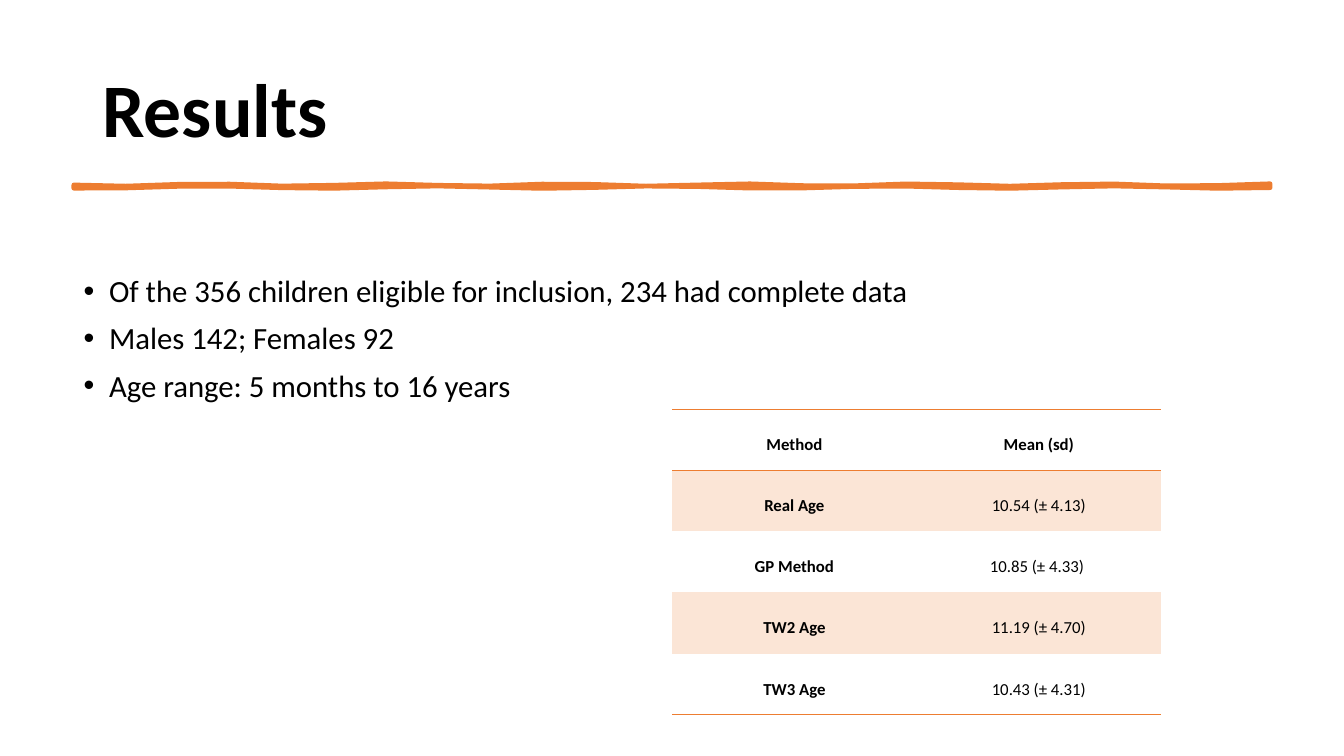
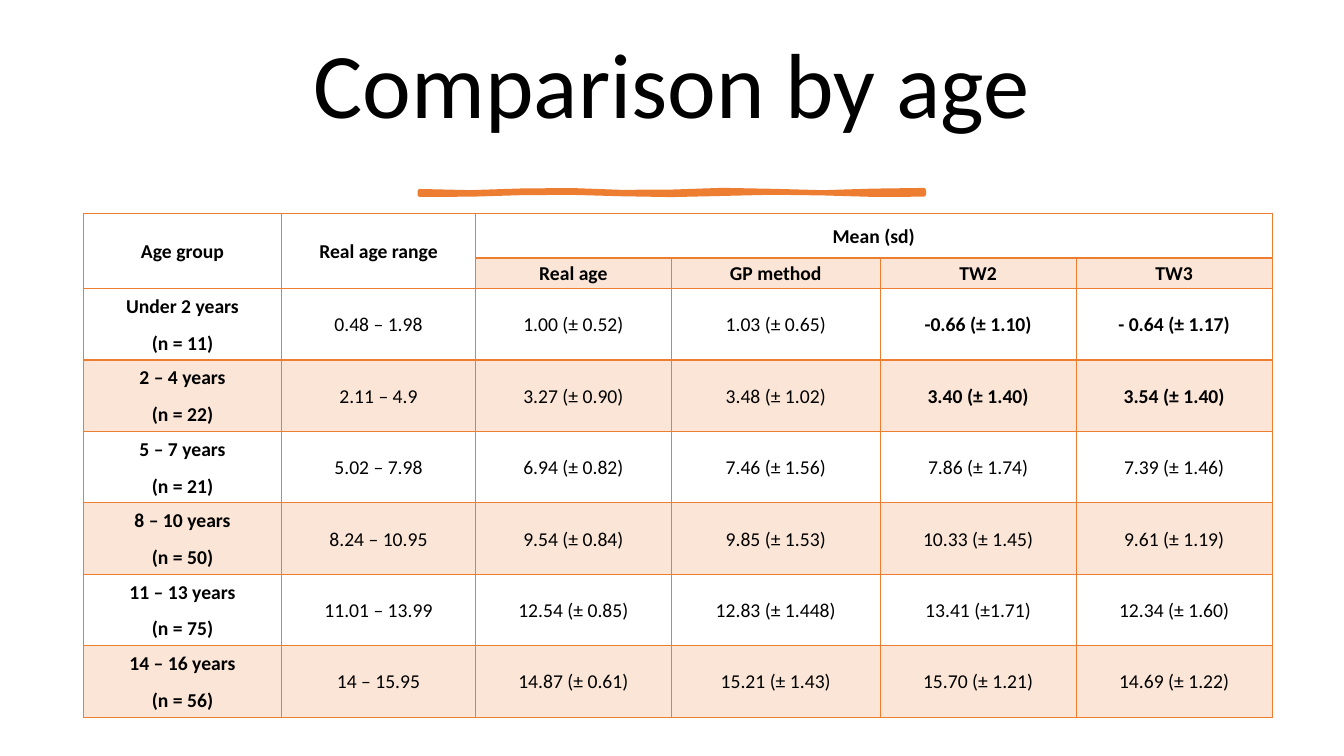
from math import sin

from lxml.etree import SubElement
from pptx import Presentation
from pptx.dml.color import RGBColor
from pptx.enum.text import MSO_ANCHOR, MSO_AUTO_SIZE, PP_ALIGN
from pptx.oxml.ns import qn
from pptx.util import Cm, Pt

FONT = "Calibri"
COLORS = {"text": "000000", "accent": "ED7D31", "band": "FBE5D6"}
PLAIN_TABLE_STYLE = "{2D5ABB26-0587-4C30-8999-92F81FD0307C}"
SIDES = {"left": "a:lnL", "right": "a:lnR", "top": "a:lnT", "bottom": "a:lnB"}

BULLETS = [
    "Of the 356 children eligible for inclusion, 234 had complete data",
    "Males 142; Females 92",
    "Age range: 5 months to 16 years",
]
METHOD_ROWS = [
    ["Method", "Mean (sd)"],
    ["Real Age", "10.54 (± 4.13)"],
    ["GP Method", "10.85 (± 4.33) "],
    ["TW2 Age", "11.19 (± 4.70)"],
    ["TW3 Age", "10.43 (± 4.31)"],
]
AGE_ROWS = [
    ["Age group", "Real age range", "Mean (sd)", "", "", ""],
    ["", "", "Real age", "GP method", "TW2", "TW3"],
    ["Under 2 years\n(n = 11)", "0.48 – 1.98", "1.00 (± 0.52)",
     "1.03 (± 0.65)", "-0.66 (± 1.10)", "- 0.64 (± 1.17)"],
    ["2 – 4 years\n(n = 22)", "2.11 – 4.9", "3.27 (± 0.90)",
     "3.48 (± 1.02)", "3.40 (± 1.40)", "3.54 (± 1.40)"],
    ["5 – 7 years\n(n = 21)", "5.02 – 7.98", "6.94 (± 0.82)",
     "7.46 (± 1.56)", "7.86 (± 1.74)", "7.39 (± 1.46)"],
    ["8 – 10 years\n(n = 50)", "8.24 – 10.95", "9.54 (± 0.84)",
     "9.85 (± 1.53)", "10.33 (± 1.45)", "9.61 (± 1.19)"],
    ["11 – 13 years\n(n = 75)", "11.01 – 13.99", "12.54 (± 0.85)",
     "12.83 (± 1.448)", "13.41 (±1.71)", "12.34 (± 1.60)"],
    ["14 – 16 years\n(n = 56)", "14 – 15.95", "14.87 (± 0.61)",
     "15.21 (± 1.43)", "15.70 (± 1.21)", "14.69 (± 1.22)"],
]


def color(name):
    return RGBColor.from_string(COLORS[name])


def format_paragraph(paragraph, size, bold=False, align=PP_ALIGN.LEFT, spacing=0.9):
    paragraph.font.name = FONT
    paragraph.font.size = Pt(size)
    paragraph.font.bold = bold
    paragraph.font.color.rgb = color("text")
    paragraph.alignment = align
    paragraph.line_spacing = spacing


def add_titled_slide(presentation, text, box, size, bold=False, align=PP_ALIGN.LEFT):
    slide = presentation.slides.add_slide(presentation.slide_layouts[5])
    title = slide.shapes.title
    title.left, title.top, title.width, title.height = map(Cm, box)
    frame = title.text_frame
    frame.text = text
    frame.auto_size = MSO_AUTO_SIZE.NONE
    frame.vertical_anchor = MSO_ANCHOR.MIDDLE
    format_paragraph(frame.paragraphs[0], size, bold, align)
    return slide


def add_brush_stroke(slide, left, middle, width):
    steps = round(width / 1.3)
    positions = [width * step / steps for step in range(steps + 1)]
    top = [(left + x, middle - 0.03 + 0.03 * sin(1.4 * x)) for x in positions]
    bottom = [(left + x, middle + 0.03 + 0.03 * sin(1.1 * x + 1)) for x in positions]
    points = [(Cm(x), Cm(y)) for x, y in top + bottom[::-1]]
    builder = slide.shapes.build_freeform(*points[0])
    builder.add_line_segments(points[1:], close=True)
    stroke = builder.convert_to_shape()
    stroke.shadow.inherit = False
    stroke.fill.solid()
    stroke.fill.fore_color.rgb = color("accent")
    stroke.line.color.rgb = color("accent")
    stroke.line.width = Pt(3.25)


def add_bullets(slide, lines, box, size):
    frame = slide.shapes.add_textbox(*map(Cm, box)).text_frame
    frame.word_wrap = True
    frame.text = "\n".join(lines)
    for paragraph in frame.paragraphs:
        format_paragraph(paragraph, size)
        paragraph.space_before = Pt(10)
        properties = paragraph._p.get_or_add_pPr()
        properties.set("marL", str(Cm(0.64)))
        properties.set("indent", str(-Cm(0.64)))
        SubElement(properties, qn("a:buFont"), typeface="Arial")
        SubElement(properties, qn("a:buChar"), char="•")


def set_borders(cell, widths):
    properties = cell._tc.get_or_add_tcPr()
    sides = [side for side in SIDES if side in widths]
    for index, side in enumerate(sides):
        line = SubElement(properties, qn(SIDES[side]), w=str(Pt(widths[side])))
        fill = SubElement(line, qn("a:solidFill"))
        SubElement(fill, qn("a:srgbClr"), val=COLORS["accent"])
        properties.insert(index, line)


def add_plain_table(slide, rows, left, top, widths, heights):
    frame = slide.shapes.add_table(
        len(rows), len(widths), Cm(left), Cm(top), Cm(sum(widths)), Cm(sum(heights)))
    for style in frame._element.iter(qn("a:tableStyleId")):
        style.text = PLAIN_TABLE_STYLE
    table = frame.table
    for column, width in zip(table.columns, widths):
        column.width = Cm(width)
    for row, height in zip(table.rows, heights):
        row.height = Cm(height)
    return table


def fill_cell(cell, text, size, bold, banded, spacing, inset):
    cell.text = text
    cell.vertical_anchor = MSO_ANCHOR.MIDDLE
    cell.margin_left = cell.margin_right = Cm(inset)
    cell.margin_top = cell.margin_bottom = 0
    for paragraph in cell.text_frame.paragraphs:
        format_paragraph(paragraph, size, bold, PP_ALIGN.CENTER, spacing)
        paragraph.space_after = Pt(8)
    if banded:
        cell.fill.solid()
        cell.fill.fore_color.rgb = color("band")
    else:
        cell.fill.background()


def add_method_table(slide):
    table = add_plain_table(slide, METHOD_ROWS, 16.94, 10.31, [6.16] * 2, [1.54] * 5)
    borders = {0: {"top": 1, "bottom": 1}, 4: {"bottom": 1}}
    for r, row in enumerate(METHOD_ROWS):
        for c, text in enumerate(row):
            cell = table.cell(r, c)
            fill_cell(cell, text, 12, r == 0 or c == 0, r % 2 == 1, 1.5, 0.18)
            set_borders(cell, borders.get(r, {}))


def add_age_table(slide):
    table = add_plain_table(
        slide, AGE_ROWS, 2.1, 5.38,
        [5, 4.88, 4.94, 5.26, 4.94, 4.94], [1.12, 0.77] + [1.8] * 6)
    for r, row in enumerate(AGE_ROWS):
        for c, text in enumerate(row):
            cell = table.cell(r, c)
            bold = r < 2 or c == 0 or (r < 4 and c > 3)
            banded = r % 2 == 1 and (r > 1 or c > 1)
            fill_cell(cell, text, 14, bold, banded, 1.07, 0.19)
            heading = r == 0 or (r == 1 and c < 2)
            set_borders(cell, dict.fromkeys(SIDES, 1) | {"bottom": 1.5 if heading else 1})
    for first, last in [((0, 0), (1, 0)), ((0, 1), (1, 1)), ((0, 2), (0, 5))]:
        table.cell(*first).merge(table.cell(*last))


def main():
    presentation = Presentation()
    presentation.slide_width = Cm(33.87)
    presentation.slide_height = Cm(19.05)

    results = add_titled_slide(
        presentation, "Results", (2.33, 1.01, 29.21, 3.68), 54, bold=True)
    add_brush_stroke(results, 1.86, 4.69, 30.15)
    add_bullets(results, BULLETS, (1.86, 6.83, 29.21, 4.34), 22)
    add_method_table(results)

    comparison = add_titled_slide(
        presentation, "Comparison by age", (1.78, 0.48, 30.3, 3.48), 66,
        align=PP_ALIGN.CENTER)
    add_brush_stroke(comparison, 10.58, 4.85, 12.7)
    add_age_table(comparison)

    presentation.save("out.pptx")


if __name__ == "__main__":
    main()
